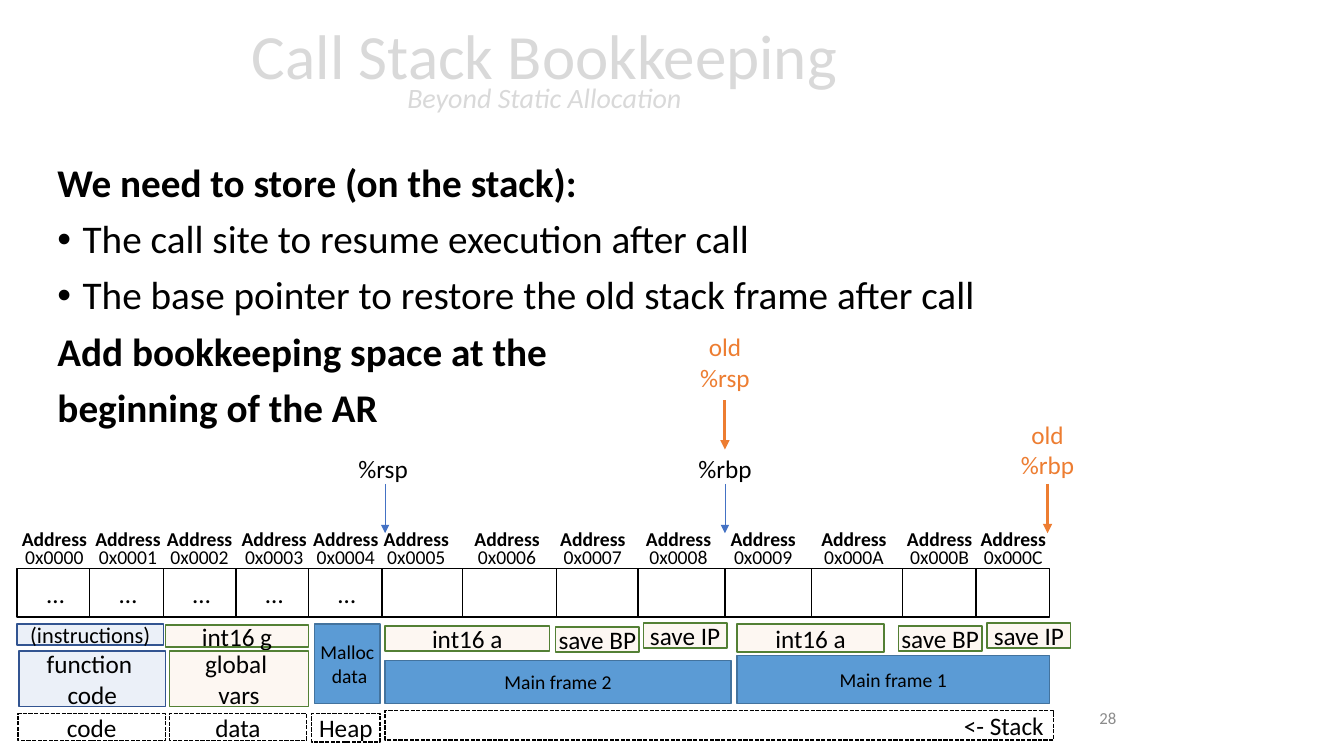
from pptx import Presentation
from pptx.dml.color import RGBColor
from pptx.enum.dml import MSO_LINE
from pptx.enum.shapes import MSO_CONNECTOR, MSO_SHAPE
from pptx.enum.text import MSO_ANCHOR, MSO_AUTO_SIZE, PP_ALIGN
from pptx.util import Inches, Pt
from lxml.etree import SubElement
from pptx.oxml.ns import qn

colour = RGBColor.from_string
BLACK, GREY, ORANGE, BLUE = "000000", "D9D9D9", "ED7D31", "4472C4"

prs = Presentation()
prs.slide_width, prs.slide_height = Inches(13.33), Inches(7.5)
slide = prs.slides.add_slide(prs.slide_layouts[1])
shapes = slide.shapes


def add_run(paragraph, text, ink=BLACK, **formats):
    run = paragraph.add_run()
    run.text = text
    run.font.color.rgb = colour(ink)
    for name, value in {"name": "Calibri", **formats}.items():
        setattr(run.font, name, value)


def add_block(place, text, size=18, fill=None, line=None, alpha=None, dash=None,
              ink=BLACK, bold=False, align=PP_ALIGN.CENTER, side=0, wrap=True):
    """Rectangle with a line, or a bare label when no line is given."""
    place = [Inches(v) for v in place]
    if line:
        block = shapes.add_shape(MSO_SHAPE.RECTANGLE, *place)
        block.shadow.inherit = False
        block.line.color.rgb = colour(line)
        block.line.width = Pt(1)
        if dash:
            block.line.dash_style = dash
    else:
        block = shapes.add_textbox(*place)
    if fill:
        block.fill.solid()
        block.fill.fore_color.rgb = colour(fill)
        if alpha:
            tint = block._element.spPr.find(".//" + qn("a:srgbClr"))
            SubElement(tint, qn("a:alpha"), val=str(alpha * 1000))
    else:
        block.fill.background()
    frame = block.text_frame
    frame.word_wrap = wrap
    frame.margin_left = frame.margin_right = Inches(side)
    frame.vertical_anchor = MSO_ANCHOR.MIDDLE if line else MSO_ANCHOR.TOP
    for i, words in enumerate(text.split("\n") if text else []):
        paragraph = frame.add_paragraph() if i else frame.paragraphs[0]
        paragraph.alignment = align
        add_run(paragraph, words, ink, size=Pt(size), bold=bold)


# Title and body placeholders
title, body = shapes.title, slide.placeholders[1]
for holder, place in ((title, (0, 0.02, 10.8, 1.45)), (body, (0.47, 1.57, 9.76, 4.76))):
    holder.left, holder.top, holder.width, holder.height = [Inches(v) for v in place]
    holder.text_frame.auto_size = MSO_AUTO_SIZE.NONE
    holder.text_frame.word_wrap = True

title.text_frame.vertical_anchor = MSO_ANCHOR.MIDDLE
heading = title.text_frame.paragraphs[0]
heading.alignment, heading.line_spacing = PP_ALIGN.CENTER, 0.7
add_run(heading, "Call Stack Bookkeeping", GREY, size=Pt(45))
heading.add_line_break()
add_run(heading, "Beyond Static Allocation", GREY, size=Pt(20), italic=True)

points = [
    ("We need to store (on the stack):", False),
    ("The call site to resume execution after call", True),
    ("The base pointer to restore the old stack frame after call", True),
    ("Add bookkeeping space at the", False),
    ("beginning of the AR", False),
]
for i, (words, bulleted) in enumerate(points):
    point = body.text_frame.add_paragraph() if i else body.text_frame.paragraphs[0]
    point.line_spacing, point.space_before = 0.9, Pt(10)
    add_run(point, words, size=Pt(28), bold=not bulleted)
    indent = Inches(0.25) if bulleted else 0
    props = point._p.get_or_add_pPr()
    props.set("marL", str(indent))
    props.set("indent", str(-indent))
    if bulleted:
        SubElement(props, qn("a:buChar"), char="•")
    else:
        SubElement(props, qn("a:buNone"))

# Slide number
add_block((8.17, 6.97, 3, 0.4), "28", 12, ink="8C8C8C", align=PP_ALIGN.RIGHT, side=0.1)

# Memory cells with their addresses
edges = [0.17, 0.89, 1.62, 2.34, 3.06, 3.79, 4.59, 5.52, 6.33, 7.19, 8.05, 8.95, 9.68, 10.41]
centres = [0.54, 1.27, 1.98, 2.72, 3.43, 4.13, 5.03, 5.88, 6.73, 7.57, 8.47, 9.32, 10.05]
for number, (left, right, centre) in enumerate(zip(edges, edges[1:], centres)):
    add_block((left, 5.64, right - left, 0.48), "", fill="FFFFFF", line=BLACK)
    add_block((centre - 0.39, 5.18, 0.78, 0.34), "Address", 14, bold=True)
    add_block((centre - 0.32, 5.36, 0.64, 0.35), f"0x{number:04X}", 14)
    if number < 5:
        add_block((left + 0.19, 5.69, 0.38, 0.4), "…", wrap=False)

# Contents of the cells
code = {"fill": BLUE, "alpha": 10, "line": "325491"}
data = {"fill": "F4B183", "alpha": 10, "line": "538035"}
frame_fill = {"fill": "5B9BD5", "line": "43739E", "size": 14}
segment = {"line": BLACK, "dash": MSO_LINE.SQUARE_DOT}
contents = [
    ((0.17, 6.19, 1.45, 0.21), "(instructions)", {**code, "size": 16}),
    ((0.19, 6.46, 1.45, 0.55), "function \ncode", code),
    ((1.64, 6.2, 1.42, 0.22), "int16 g", data),
    ((1.68, 6.46, 1.38, 0.55), "global \nvars", data),
    ((3.12, 6.19, 0.65, 0.79), "Malloc\n data", frame_fill),
    ((3.82, 6.55, 3.43, 0.43), "Main frame 2", frame_fill),
    ((7.31, 6.5, 3.1, 0.48), "Main frame 1", frame_fill),
    ((3.82, 6.21, 1.63, 0.25), "int16 a", data),
    ((5.51, 6.22, 0.83, 0.25), "save BP", data),
    ((6.38, 6.18, 0.83, 0.25), "save IP", data),
    ((7.31, 6.19, 1.46, 0.28), "int16 a", data),
    ((8.91, 6.21, 0.83, 0.25), "save BP", data),
    ((9.79, 6.18, 0.83, 0.25), "save IP", data),
    ((0.18, 7.08, 1.46, 0.27), "code", segment),
    ((1.68, 7.08, 1.36, 0.27), "data", segment),
    ((3.09, 7.08, 0.68, 0.28), "Heap", segment),
    ((3.82, 7.05, 6.63, 0.29), "<- Stack", {**segment, "align": PP_ALIGN.RIGHT, "side": 0.1}),
]
for place, words, look in contents:
    add_block(place, words, **look)

# Register pointers: label above an arrow
registers = [
    ("%rsp", (3.45, 4.45, 0.7, 0.4), 3.82, 4.8, BLACK, BLUE, 0.5),
    ("%rbp", (6.82, 4.45, 0.74, 0.4), 7.19, 4.8, BLACK, BLUE, 0.5),
    ("old\n%rsp", (6.84, 3.24, 0.7, 0.71), 7.19, 3.97, ORANGE, ORANGE, 2.25),
    ("old\n%rbp", (10.02, 4.11, 0.74, 0.71), 10.39, 4.8, ORANGE, ORANGE, 2.25),
]
for words, place, x, y, ink, arrow_ink, weight in registers:
    add_block(place, words, ink=ink, wrap=False)
    arrow = shapes.add_connector(MSO_CONNECTOR.STRAIGHT, Inches(x), Inches(y),
                                 Inches(x), Inches(y + 0.49))
    arrow.line.color.rgb = colour(arrow_ink)
    arrow.line.width = Pt(weight)
    SubElement(arrow.line._get_or_add_ln(), qn("a:tailEnd"), type="triangle")
    SubElement(arrow._element.spPr, qn("a:effectLst"))

prs.save("out.pptx")
